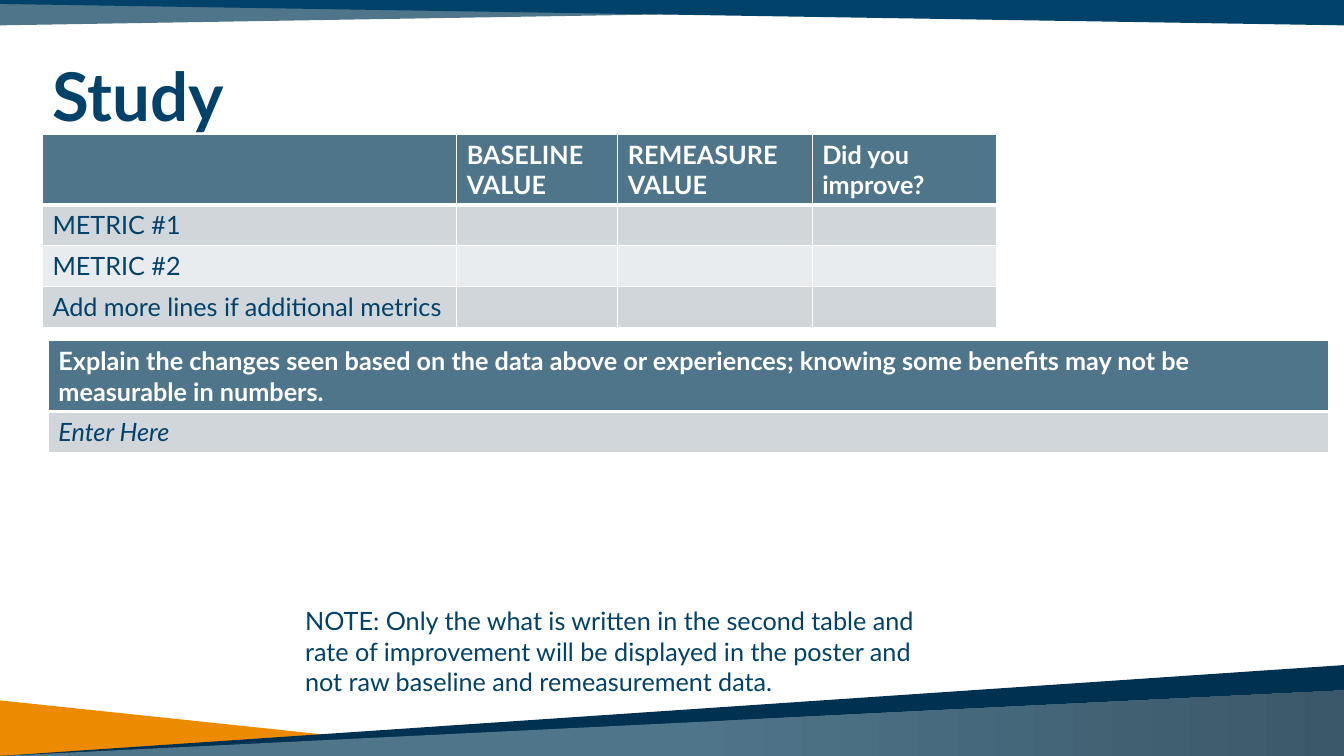
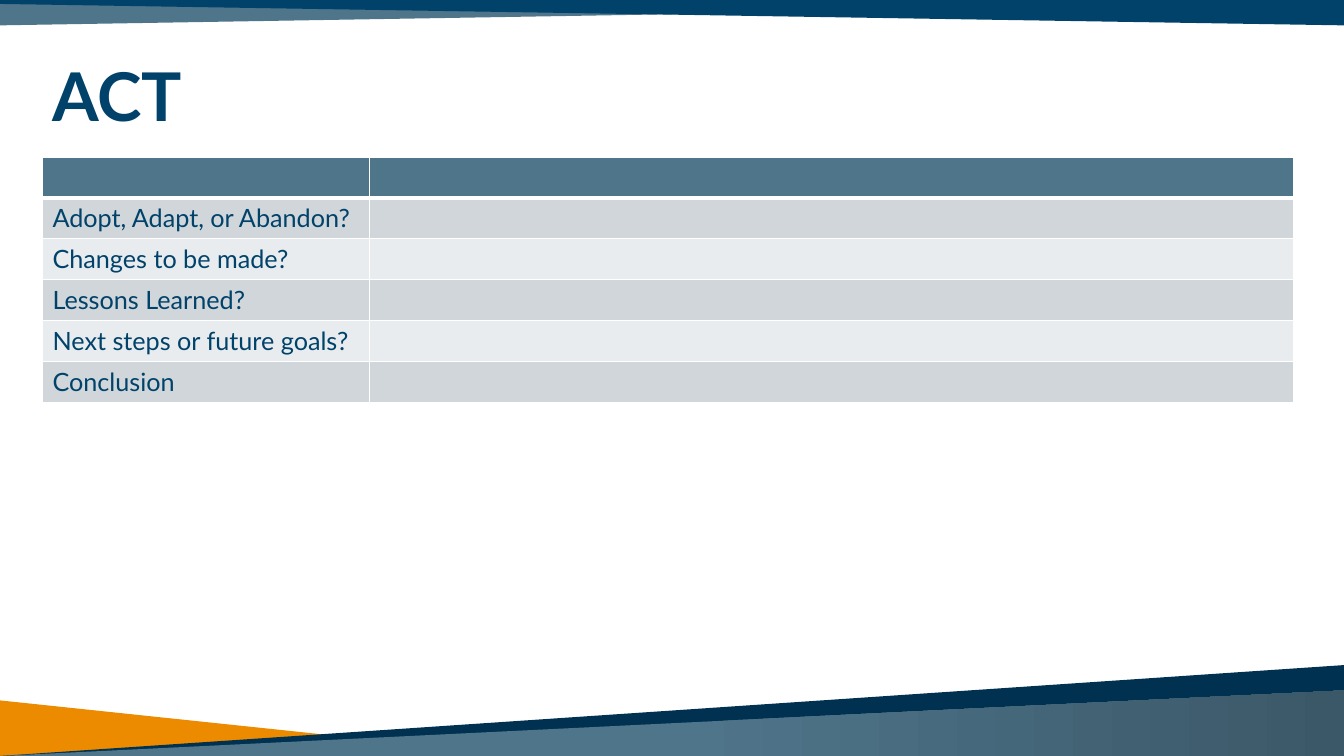
from dataclasses import dataclass

from lxml import etree
from pptx import Presentation
from pptx.dml.color import RGBColor
from pptx.enum.text import MSO_ANCHOR
from pptx.oxml.ns import qn
from pptx.util import Cm, Pt

MIDDLE = MSO_ANCHOR.MIDDLE


@dataclass(frozen=True)
class Theme:
    font: str = "Lato"
    title: int = 48
    body: int = 18
    navy: str = "01426A"
    deep: str = "013150"
    slate: str = "4F758B"
    dusk: str = "3B5868"
    orange: str = "ED8B00"
    white: str = "FFFFFF"
    stripes: tuple = ("D0D6DA", "E9ECEE")
    thin: float = 1
    thick: float = 3


THEME = Theme()
WIDE, HIGH = 33.87, 19.05
ROW, TALL = 1.03, 1.77  # one-line and two-line rows

# Fill and corner points in cm, from back to front; two colours make a gradient
BANDS = [
    ((THEME.orange,), [(0, 17.65), (0, HIGH), (13.31, HIGH)]),
    ((THEME.deep,), [(WIDE, 16.76), (0, HIGH), (WIDE, HIGH)]),
    ((THEME.slate, THEME.dusk), [(WIDE, 17.4), (0, HIGH), (WIDE, HIGH)]),
    ((THEME.slate,), [(0, 0), (WIDE, 0), (WIDE, 0.08), (0, 0.64)]),
    ((THEME.navy,), [(0, 0), (0, 0.1), (WIDE, 0.64), (WIDE, 0)]),
]

SLIDES = [
    {
        "title": "Study",
        "tables": [
            {
                "at": (1.07, 3.38),
                "cols": (10.44, 4.06, 4.9, 4.65),
                "head": TALL,
                "rows": [
                    ("", "BASELINE\nVALUE", "REMEASURE\nVALUE", "Did you improve?"),
                    ("METRIC #1", "", "", ""),
                    ("METRIC #2", "", "", ""),
                    ("Add more lines if additional metrics", "", "", ""),
                ],
            },
            {
                "at": (1.22, 8.59),
                "cols": (32.26,),
                "head": TALL,
                "italic": True,
                "rows": [
                    ("Explain the changes seen based on the data above or "
                     "experiences; knowing some benefits may not be "
                     "measurable in numbers.",),
                    ("Enter Here",),
                ],
            },
        ],
        "note": "NOTE: Only the what is written in the second table and rate "
                "of improvement will be displayed in the poster and not raw "
                "baseline and remeasurement data.",
    },
    {
        "title": "ACT",
        "tables": [
            {
                "at": (1.07, 3.96),
                "cols": (8.25, 23.27),
                "head": ROW,
                "rows": [
                    ("", ""),
                    ("Adopt, Adapt, or Abandon?", ""),
                    ("Changes to be made?", ""),
                    ("Lessons Learned?", ""),
                    ("Next steps or future goals?", ""),
                    ("Conclusion", ""),
                ],
            },
        ],
    },
]


def rgb(code):
    return RGBColor.from_string(code)


def style(frame, size, color, bold=False, italic=False):
    for para in frame.paragraphs:
        for run in para.runs:
            font = run.font
            font.name, font.size = THEME.font, Pt(size)
            font.bold, font.italic = bold, italic
            font.color.rgb = rgb(color)


def add_bands(slide, layout):
    """Draw the bands and move them to the layout that all slides share."""
    for colors, points in BANDS:
        spots = [(Cm(x), Cm(y)) for x, y in points]
        pen = slide.shapes.build_freeform(*spots[0])
        pen.add_line_segments(spots[1:])
        band = pen.convert_to_shape()
        band.shadow.inherit = False
        band.line.fill.background()
        if len(colors) == 1:
            band.fill.solid()
            band.fill.fore_color.rgb = rgb(colors[0])
        else:
            band.fill.gradient()
            band.fill.gradient_angle = 0
            stops = band.fill.gradient_stops
            for stop, color, place in zip(stops, colors, (0.51, 1)):
                stop.color.rgb = rgb(color)
                stop.position = place
        layout.shapes.element.append(band.element)


def add_text(slide, text, box, size, bold=False):
    frame = slide.shapes.add_textbox(*map(Cm, box)).text_frame
    frame.word_wrap = True
    frame.text = text
    style(frame, size, THEME.navy, bold)
    return frame


def add_title(slide, text):
    frame = add_text(slide, text, (1.07, 1.45, 27.3, 2.13), THEME.title, True)
    frame.vertical_anchor = MIDDLE
    frame.paragraphs[0].line_spacing = 0.9


def add_edges(cell, top, bottom):
    sides = {"L": THEME.thin, "R": THEME.thin, "T": top, "B": bottom}
    props = cell._tc.get_or_add_tcPr()
    for spot, (side, width) in enumerate(sides.items()):
        line = etree.Element(qn(f"a:ln{side}"), w=str(Pt(width)))
        fill = etree.SubElement(line, qn("a:solidFill"))
        etree.SubElement(fill, qn("a:srgbClr"), val=THEME.white)
        props.insert(spot, line)


def add_grid(slide, spec):
    rows, cols = spec["rows"], spec["cols"]
    highs = [spec["head"]] + [ROW] * (len(rows) - 1)
    size = (sum(cols), sum(highs))
    grid = slide.shapes.add_table(
        len(rows), len(cols), *map(Cm, spec["at"] + size)).table
    for col, width in zip(grid.columns, cols):
        col.width = Cm(width)
    for r, (texts, high) in enumerate(zip(rows, highs)):
        grid.rows[r].height = Cm(high)
        head = r == 0
        fill = THEME.slate if head else THEME.stripes[(r - 1) % 2]
        color = THEME.white if head else THEME.navy
        top = THEME.thick if r == 1 else THEME.thin
        bottom = THEME.thick if head else THEME.thin
        italic = not head and spec.get("italic", False)
        for c, text in enumerate(texts):
            cell = grid.cell(r, c)
            cell.fill.solid()
            cell.fill.fore_color.rgb = rgb(fill)
            add_edges(cell, top, bottom)
            if text:
                cell.text_frame.text = text
                style(cell.text_frame, THEME.body, color, head, italic)


def main():
    deck = Presentation()
    deck.slide_width, deck.slide_height = Cm(WIDE), Cm(HIGH)
    blank = deck.slide_layouts[6]
    for i, page in enumerate(SLIDES):
        slide = deck.slides.add_slide(blank)
        if i == 0:
            add_bands(slide, blank)
        add_title(slide, page["title"])
        for spec in page["tables"]:
            add_grid(slide, spec)
        if "note" in page:
            add_text(slide, page["note"], (7.44, 15.14, 16.48, 2.57), THEME.body)
    deck.save("out.pptx")


if __name__ == "__main__":
    main()
